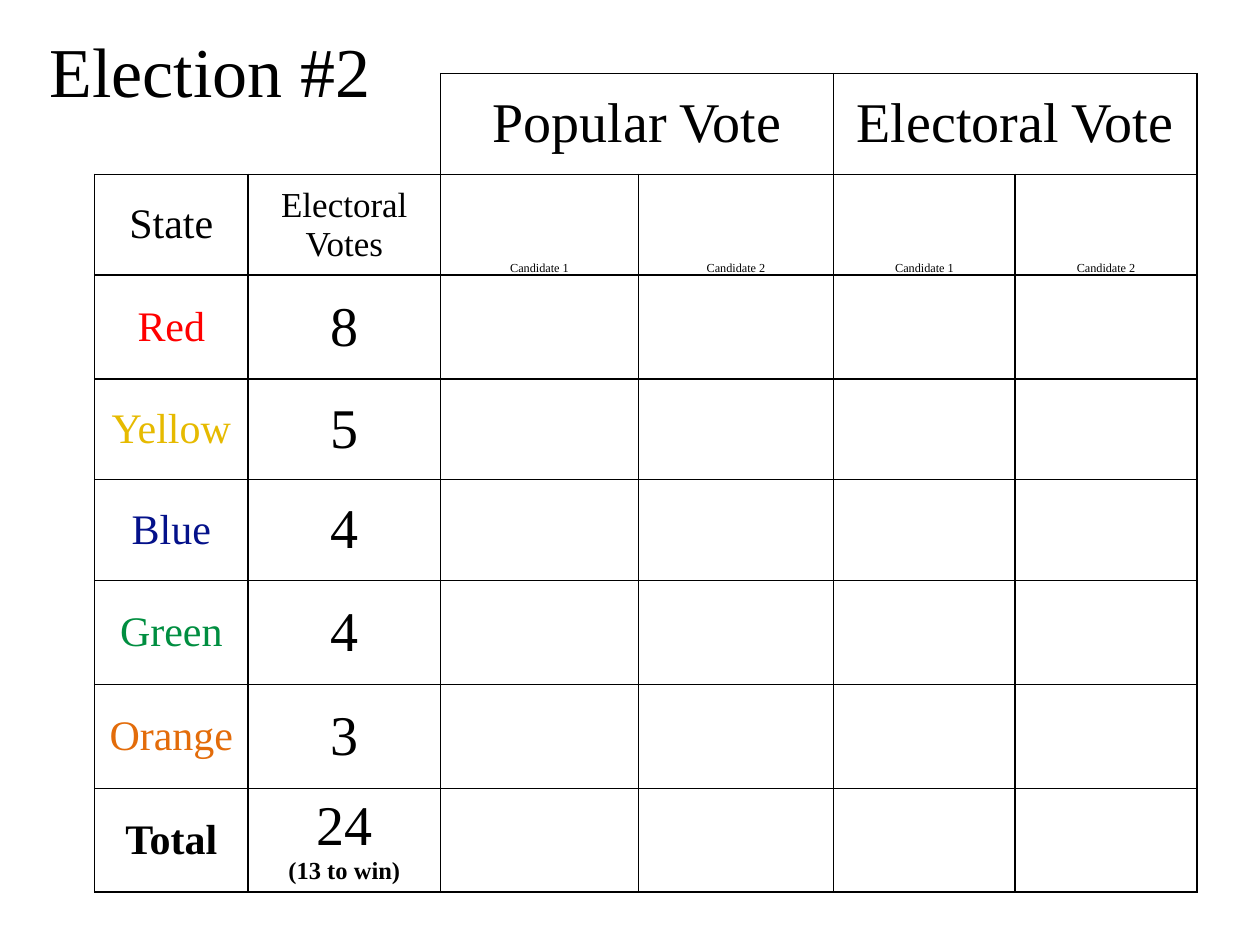
from dataclasses import dataclass

from lxml import etree
from pptx import Presentation
from pptx.dml.color import RGBColor
from pptx.enum import text
from pptx.oxml import ns
from pptx.util import Pt


@dataclass
class Theme:
    font: str = "Times New Roman"
    ink: str = "000000"
    title: int = 40
    big: int = 32
    name: int = 24
    head: int = 20
    note: int = 14
    tiny: int = 7
    rule: int = 1


theme = Theme()
TITLE = "Election #2"
GROUPS = ["Popular Vote", "Electoral Vote"]
HEADS = ["State", "Electoral Votes"]
SIDES = ["Candidate 1", "Candidate 2"]
STATES = [
    ("Red", 8, "FF0000"),
    ("Yellow", 5, "E6BA00"),
    ("Blue", 4, "04118A"),
    ("Green", 4, "008E40"),
    ("Orange", 3, "E36C0A"),
]
GOAL = "(13 to win)"
COLS = [87.8, 110, 113, 111.6, 103.8, 103.8]
ROWS = [57.6, 57.6, 59.5, 57.4, 57.6, 59.4, 59.4, 59.4]
LEFT, TOP = 54, 42


def style(par, size, color=theme.ink, bold=False):
    par.alignment = text.PP_ALIGN.CENTER
    font = par.font
    font.name, font.size, font.bold = theme.font, Pt(size), bold
    font.color.rgb = RGBColor.from_string(color)


def write(cell, words, size, color=theme.ink, bold=False):
    cell.text = words
    style(cell.text_frame.paragraphs[0], size, color, bold)


def border(cell, shown="LRTB"):
    """Rule the shown sides of a cell and clear the others."""
    props = cell._tc.get_or_add_tcPr()
    for side in "LRTB":
        line = etree.SubElement(props, ns.qn(f"a:ln{side}"), w=str(Pt(theme.rule)))
        if side in shown:
            fill = etree.SubElement(line, ns.qn("a:solidFill"))
            etree.SubElement(fill, ns.qn("a:srgbClr"), val=theme.ink)
        else:
            etree.SubElement(line, ns.qn("a:noFill"))


def make_grid(slide):
    frame = slide.shapes.add_table(
        len(ROWS), len(COLS), Pt(LEFT), Pt(TOP), Pt(sum(COLS)), Pt(sum(ROWS)))
    grid = frame.table
    grid.first_row = grid.horz_banding = False
    for col, width in zip(grid.columns, COLS):
        col.width = Pt(width)
    for row, height in zip(grid.rows, ROWS):
        row.height = Pt(height)
    corner = {(0, 0): "B", (0, 1): "RB"}
    for r in range(len(ROWS)):
        for c in range(len(COLS)):
            cell = grid.cell(r, c)
            border(cell, corner.get((r, c), "LRTB"))
            cell.fill.background()
            cell.margin_left = cell.margin_right = Pt(4.5)
            cell.margin_top = cell.margin_bottom = 0
            cell.vertical_anchor = text.MSO_ANCHOR.MIDDLE
    for c in range(0, len(COLS), 2):
        grid.cell(0, c).merge(grid.cell(0, c + 1))
    return grid


def fill_grid(grid):
    for i, group in enumerate(GROUPS):
        write(grid.cell(0, 2 + 2 * i), group, theme.big)
    for c, (head, size) in enumerate(zip(HEADS, (theme.name, theme.head))):
        write(grid.cell(1, c), head, size)
    for c, side in enumerate(SIDES * len(GROUPS), 2):
        cell = grid.cell(1, c)
        write(cell, side, theme.tiny)
        cell.vertical_anchor = text.MSO_ANCHOR.BOTTOM
    for r, (state, votes, color) in enumerate(STATES, 2):
        write(grid.cell(r, 0), state, theme.name, color)
        write(grid.cell(r, 1), str(votes), theme.big)
    last = len(ROWS) - 1
    write(grid.cell(last, 0), "Total", theme.name, bold=True)
    total = grid.cell(last, 1)
    write(total, str(sum(votes for _, votes, _ in STATES)), theme.big)
    goal = total.text_frame.add_paragraph()
    goal.text = GOAL
    style(goal, theme.note, bold=True)


def main():
    deck = Presentation()
    deck.slide_width, deck.slide_height = Pt(720), Pt(540)
    slide = deck.slides.add_slide(deck.slide_layouts[6])
    fill_grid(make_grid(slide))
    box = slide.shapes.add_textbox(0, Pt(12), Pt(240), Pt(55.7))
    box.text_frame.word_wrap = True
    box.text_frame.text = TITLE
    style(box.text_frame.paragraphs[0], theme.title)
    deck.save("out.pptx")


if __name__ == "__main__":
    main()
